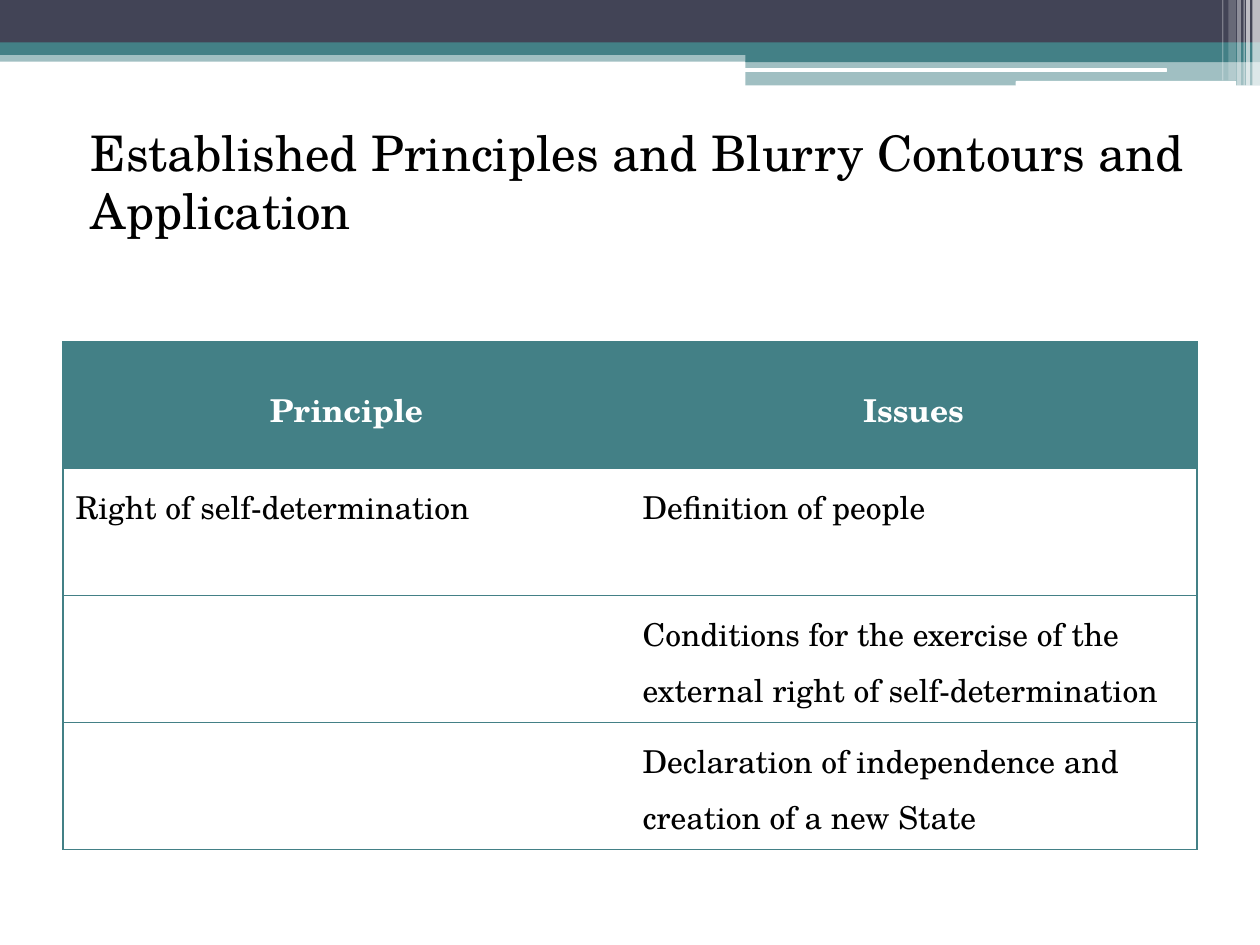
from lxml.etree import SubElement
from pptx import Presentation
from pptx.dml.color import RGBColor
from pptx.enum.shapes import MSO_SHAPE as Shape
from pptx.enum.text import MSO_ANCHOR as Anchor, PP_ALIGN as Align
from pptx.oxml.ns import qn
from pptx.util import Pt

FONT = "TeX Gyre Schola"
TEAL = RGBColor(0x43, 0x80, 0x86)
SLATE = RGBColor(0x42, 0x44, 0x56)
WHITE = RGBColor(0xFF, 0xFF, 0xFF)
BLACK = RGBColor(0, 0, 0)

# Content
TITLE = "Established Principles and Blurry Contours and Application"
ROWS = [
    ("Principle", "Issues"),
    ("Right of self-determination", "Definition of people"),
    ("", "Conditions for the exercise of the external right of self-determination"),
    ("", "Declaration of independence and creation of a new State"),
]

# Header bars: shape, left, top, width, height, colour, opacity in percent
BARS = [
    (Shape.RECTANGLE, 0, 28.8, 720, 6.5, TEAL, 50),
    (Shape.RECTANGLE, 0, 0, 720, 24.5, SLATE, 100),
    (Shape.RECTANGLE, 0, 24.2, 720, 7.2, TEAL, 100),
    (Shape.RECTANGLE, 426, 28.3, 294, 7.2, TEAL, 100),
    (Shape.RECTANGLE, 426, 34.6, 294, 14.2, TEAL, 50),
    (Shape.ROUNDED_RECTANGLE, 425.6, 39, 241.2, 2.16, WHITE, 100),
    (Shape.ROUNDED_RECTANGLE, 580.4, 46.3, 126, 2.9, WHITE, 100),
]
# Stripes at the right edge: left, width, height, opacity in percent
STRIPES = [
    (715.7, 4.3, 49, 65),
    (712.1, 2.16, 49, 65),
    (710.6, 0.72, 49, 60),
    (707, 2.16, 49, 40),
    (702, 4.3, 46, 20),
    (698.4, 0.72, 46, 30),
]

TABLE_LEFT, TABLE_TOP, COLUMN_WIDTH, ROW_HEIGHT = 36, 195.2, 324, 72.6


def add_bar(page, kind, left, top, width, height, colour, opacity):
    bar = page.shapes.add_shape(kind, Pt(left), Pt(top), Pt(width), Pt(height))
    bar.shadow.inherit = False
    bar.line.fill.background()
    bar.fill.solid()
    bar.fill.fore_color.rgb = colour
    if opacity < 100:
        tint = bar.fill._xPr.find(qn("a:solidFill"))[0]
        SubElement(tint, qn("a:alpha"), val=str(opacity * 1000))


def style_text(frame, size, colour, bold=False):
    for para in frame.paragraphs:
        for font in (para.font, *(span.font for span in para.runs)):
            font.name, font.size, font.bold = FONT, Pt(size), bold
            font.color.rgb = colour


def set_borders(cell, visible):
    properties = cell._tc.get_or_add_tcPr()
    for index, side in enumerate(("L", "R", "T", "B")):
        line = SubElement(properties, qn(f"a:ln{side}"), w=str(Pt(0.75)))
        if side in visible:
            fill = SubElement(line, qn("a:solidFill"))
            SubElement(fill, qn("a:srgbClr"), val=str(TEAL))
        else:
            SubElement(line, qn("a:noFill"))


def add_title(page):
    box = page.shapes.title
    box.left, box.top, box.width, box.height = Pt(36), Pt(66.2), Pt(648), Pt(98.6)
    frame = box.text_frame
    frame.text = TITLE
    frame.word_wrap = True
    frame.vertical_anchor = Anchor.TOP
    para = frame.paragraphs[0]
    para.alignment = Align.LEFT
    para.space_before = Pt(3)
    para._p.get_or_add_pPr().set("marL", str(Pt(8.64)))
    style_text(frame, 28, BLACK)


def add_principles_table(page):
    columns = len(ROWS[0])
    table = page.shapes.add_table(
        len(ROWS), columns, Pt(TABLE_LEFT), Pt(TABLE_TOP),
        Pt(COLUMN_WIDTH * columns), Pt(ROW_HEIGHT * len(ROWS))).table
    table.horz_banding = False
    for r, texts in enumerate(ROWS):
        table.rows[r].height = Pt(ROW_HEIGHT)
        header = r == 0
        for c, text in enumerate(texts):
            cell = table.cell(r, c)
            cell.text = text
            set_borders(cell, "LTB" if c == 0 else "RTB")
            cell.fill.solid()
            cell.fill.fore_color.rgb = TEAL if header else WHITE
            cell.vertical_anchor = Anchor.MIDDLE if header else Anchor.TOP
            para = cell.text_frame.paragraphs[0]
            para.alignment = Align.CENTER if header else Align.LEFT
            para.line_spacing = 1.2
            style_text(cell.text_frame, 18, WHITE if header else BLACK, header)


def main():
    deck = Presentation()
    deck.slide_width, deck.slide_height = Pt(720), Pt(540)
    page = deck.slides.add_slide(deck.slide_layouts[5])
    for bar in BARS:
        add_bar(page, *bar)
    for left, width, height, opacity in STRIPES:
        add_bar(page, Shape.RECTANGLE, left, 0, width, height, WHITE, opacity)
    add_title(page)
    add_principles_table(page)
    deck.save("out.pptx")


if __name__ == "__main__":
    main()
